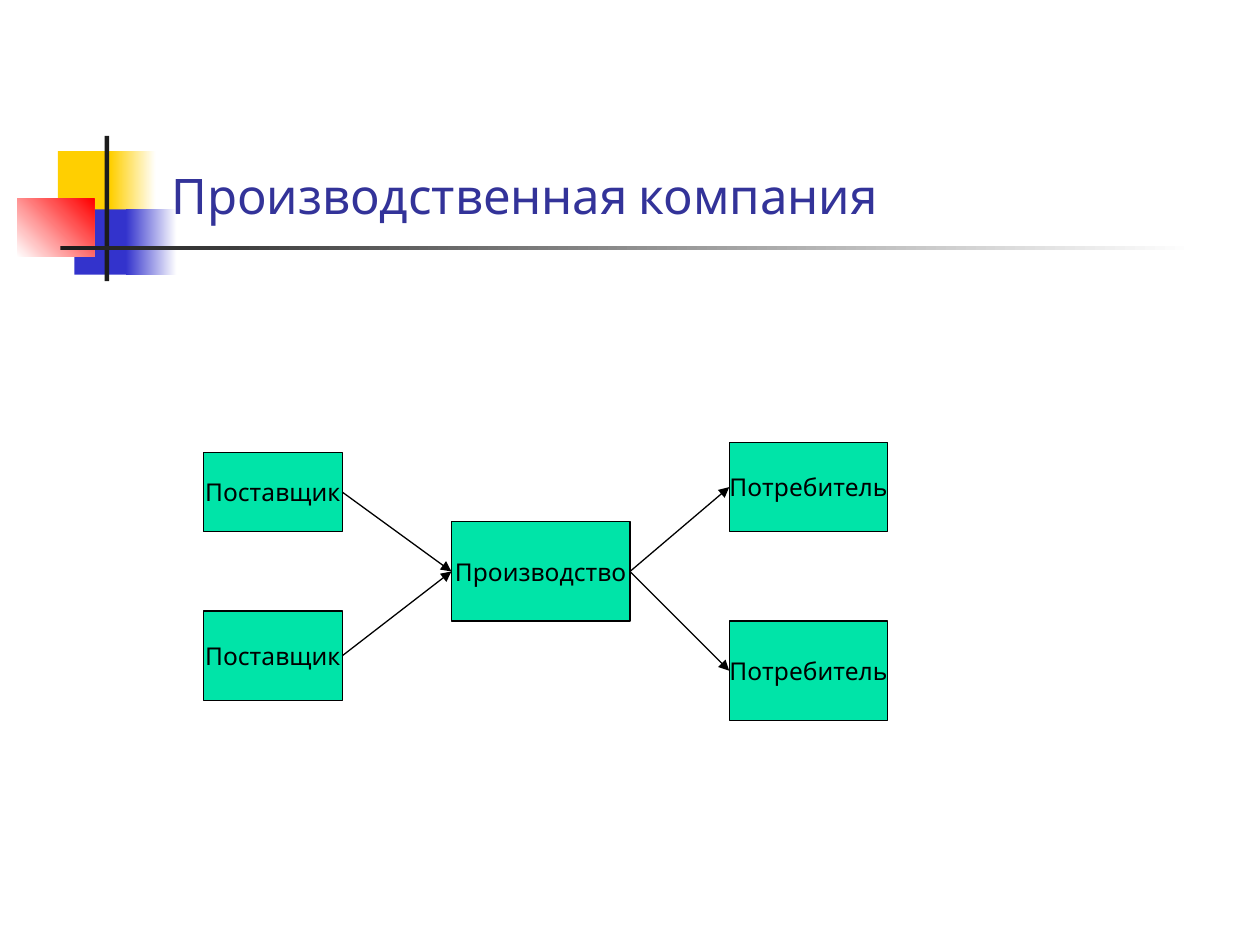
"""Build the supply chain slide of a manufacturing company."""
import pptx
import pptx.dml.color
import pptx.enum.shapes
import pptx.enum.text
import pptx.oxml
import pptx.oxml.ns
import pptx.util
from pptx.util import Cm

SHAPE = pptx.enum.shapes.MSO_SHAPE
ANCHOR = pptx.enum.text.MSO_ANCHOR
ALIGN = pptx.enum.text.PP_ALIGN
LEFT_SIDE, RIGHT_SIDE = 1, 3


def rgb(value):
    return pptx.dml.color.RGBColor.from_string(value)


class Deck:
    font = "Cabin"
    box_fill = "00E4A8"
    ink = "000000"
    line_width = pptx.util.Pt(0.75)

    def __init__(self, prs):
        self.s = prs.slides.add_slide(prs.slide_layouts[5])

    def add_run(self, p, text, size, color):
        r = p.add_run()
        r.text = text
        r.font.name = self.font
        r.font.size = pptx.util.Pt(size)
        r.font.color.rgb = rgb(color)

    def rect(self, x, y, w, h, kind=SHAPE.RECTANGLE):
        sp = self.s.shapes.add_shape(kind, Cm(x), Cm(y), Cm(w), Cm(h))
        sp.shadow.inherit = False
        return sp

    def ornament(self, x, y, w, h, *colors, angle=0):
        sp = self.rect(x, y, w, h)
        sp.line.fill.background()
        if len(colors) == 1:
            sp.fill.solid()
            sp.fill.fore_color.rgb = rgb(colors[0])
            return
        sp.fill.gradient()
        sp.fill.gradient_angle = angle
        for stop, color, position in zip(sp.fill.gradient_stops, colors, (0, 1)):
            stop.color.rgb = rgb(color)
            stop.position = position

    def title(self, text, x, y, w, h):
        sp = self.s.shapes.title
        sp.left, sp.top, sp.width, sp.height = Cm(x), Cm(y), Cm(w), Cm(h)
        self.s.shapes.element.append(sp.element)
        tf = sp.text_frame
        tf.auto_size = pptx.enum.text.MSO_AUTO_SIZE.NONE
        tf.vertical_anchor = ANCHOR.BOTTOM
        p = tf.paragraphs[0]
        p.alignment = ALIGN.LEFT
        self.add_run(p, text, 28, "333399")

    def box(self, text, x, y, w, h, kind=SHAPE.RECTANGLE):
        sp = self.rect(x, y, w, h, kind)
        sp.fill.solid()
        sp.fill.fore_color.rgb = rgb(self.box_fill)
        sp.line.color.rgb = rgb(self.ink)
        sp.line.width = self.line_width
        tf = sp.text_frame
        tf.word_wrap = False
        tf.vertical_anchor = ANCHOR.MIDDLE
        p = tf.paragraphs[0]
        p.alignment = ALIGN.CENTER
        self.add_run(p, text, 14, self.ink)
        return sp

    def arrow(self, source, target):
        cxn = self.s.shapes.add_connector(
            pptx.enum.shapes.MSO_CONNECTOR.STRAIGHT, 0, 0, 0, 0)
        cxn.begin_connect(source, RIGHT_SIDE)
        cxn.end_connect(target, LEFT_SIDE)
        cxn.line.color.rgb = rgb(self.ink)
        cxn.line.width = self.line_width
        ln = cxn.line._get_or_add_ln()
        ln.append(pptx.oxml.parse_xml(
            f'<a:tailEnd {pptx.oxml.ns.nsdecls("a")} type="triangle"/>'))
        cxn.element.spPr.append(pptx.oxml.parse_xml(
            f'<a:effectLst {pptx.oxml.ns.nsdecls("a")}/>'))


def main():
    prs = pptx.Presentation()
    prs.slide_width, prs.slide_height = Cm(25.4), Cm(19.05)
    deck = Deck(prs)

    yellow, blue, red, dark, white = "FFCF01", "3333CC", "FF0000", "1C1C1C", "FFFFFF"
    deck.ornament(1.17, 3.05, 1.22, 1.32, yellow)
    deck.ornament(2.23, 3.05, 0.91, 1.32, yellow, white)
    deck.ornament(1.5, 4.22, 1.17, 1.32, blue)
    deck.ornament(2.54, 4.22, 1.02, 1.32, blue, white)
    deck.ornament(0.35, 4.01, 1.55, 1.17, white, red, angle=45)
    deck.ornament(2.11, 2.74, 0.09, 2.93, dark)
    deck.ornament(1.22, 4.95, 22.86, 0.09, dark, white)
    deck.title("Производственная компания", 3.2, 0.58, 21.64, 4.06)

    suppliers = [
        deck.box("Поставщик", 4.1, 9.12, 2.8, 1.6, SHAPE.FLOWCHART_PROCESS),
        deck.box("Поставщик", 4.1, 12.32, 2.8, 1.8),
    ]
    plant = deck.box("Производство", 9.1, 10.52, 3.6, 2)
    consumers = [
        deck.box("Потребитель", 14.7, 8.92, 3.2, 1.8),
        deck.box("Потребитель", 14.7, 12.52, 3.2, 2),
    ]
    for supplier in reversed(suppliers):
        deck.arrow(supplier, plant)
    for consumer in consumers:
        deck.arrow(plant, consumer)

    prs.save("out.pptx")


if __name__ == "__main__":
    main()
